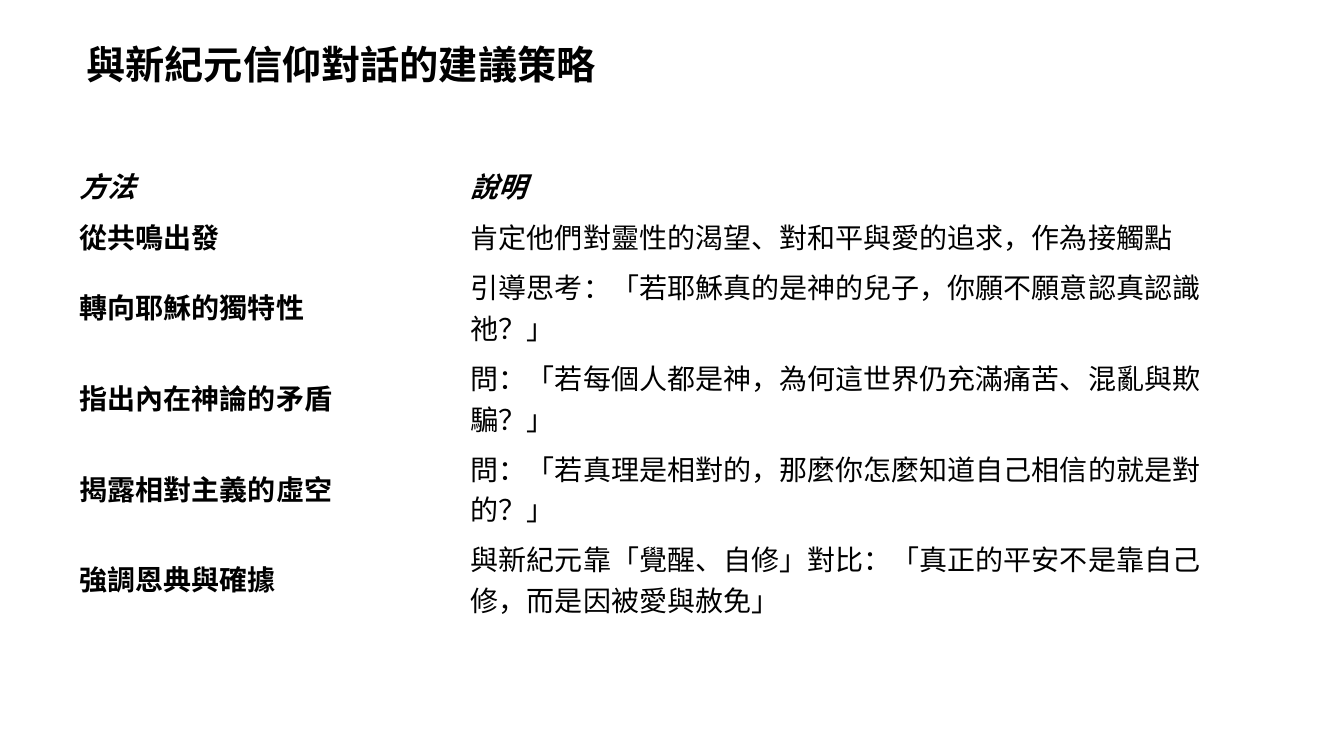
from pptx import Presentation
from pptx.dml.color import RGBColor
from pptx.enum.text import MSO_ANCHOR
from pptx.util import Inches, Pt

MIDDLE = MSO_ANCHOR.MIDDLE
BLACK = RGBColor(0x00, 0x00, 0x00)
FONT = "Calibri"

TITLE = "與新紀元信仰對話的建議策略"
HEADINGS = ("方法", "說明")
STRATEGIES = [
    ("從共鳴出發", "肯定他們對靈性的渴望、對和平與愛的追求，作為接觸點"),
    ("轉向耶穌的獨特性", "引導思考：「若耶穌真的是神的兒子，你願不願意認真認識祂？」"),
    ("指出內在神論的矛盾", "問：「若每個人都是神，為何這世界仍充滿痛苦、混亂與欺騙？」"),
    ("揭露相對主義的虛空", "問：「若真理是相對的，那麼你怎麼知道自己相信的就是對的？」"),
    ("強調恩典與確據", "與新紀元靠「覺醒、自修」對比：「真正的平安不是靠自己修，而是因被愛與赦免」"),
]
COLUMN_WIDTHS = (3.88, 7.62)
ROW_HEIGHTS = (0.5, 0.5, 0.9, 0.9, 0.9, 0.9)


def write(paragraph, text, size, bold, italic=False):
    paragraph.text = text
    font = paragraph.font
    font.name = FONT
    font.size = Pt(size)
    font.bold = bold
    font.italic = italic
    font.color.rgb = BLACK


def add_title(slide):
    title = slide.shapes.add_textbox(Inches(0.76), Inches(0.27), Inches(11.5), Inches(0.79))
    frame = title.text_frame
    frame.word_wrap = True
    frame.vertical_anchor = MIDDLE
    heading = frame.paragraphs[0]
    heading.line_spacing = 0.9
    write(heading, TITLE, 28, bold=True)


def add_strategy_table(slide):
    rows = [HEADINGS] + STRATEGIES
    strategies = slide.shapes.add_table(
        len(rows), len(HEADINGS), Inches(0.69), Inches(1.59),
        Inches(sum(COLUMN_WIDTHS)), Inches(sum(ROW_HEIGHTS))).table
    strategies.horz_banding = False

    for column, width in zip(strategies.columns, COLUMN_WIDTHS):
        column.width = Inches(width)
    for row, height in zip(strategies.rows, ROW_HEIGHTS):
        row.height = Inches(height)

    # Headings are bold italic, method names bold, explanations plain
    for r, texts in enumerate(rows):
        for c, text in enumerate(texts):
            cell = strategies.cell(r, c)
            cell.fill.background()
            cell.vertical_anchor = MIDDLE
            write(cell.text_frame.paragraphs[0], text, 20,
                  bold=r == 0 or c == 0, italic=r == 0)


def main():
    deck = Presentation()
    deck.slide_width = Inches(13.33)
    deck.slide_height = Inches(7.5)
    slide = deck.slides.add_slide(deck.slide_layouts[6])
    add_title(slide)
    add_strategy_table(slide)
    deck.save("out.pptx")


if __name__ == "__main__":
    main()
